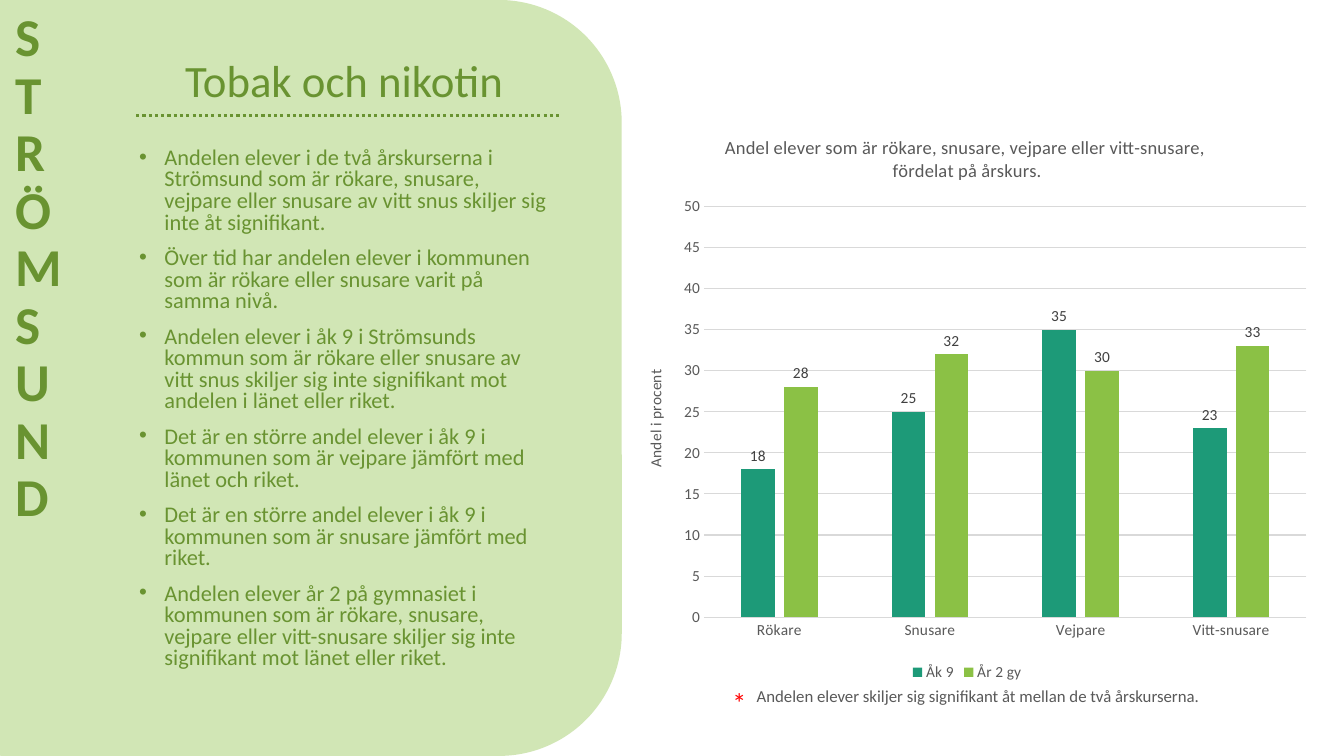
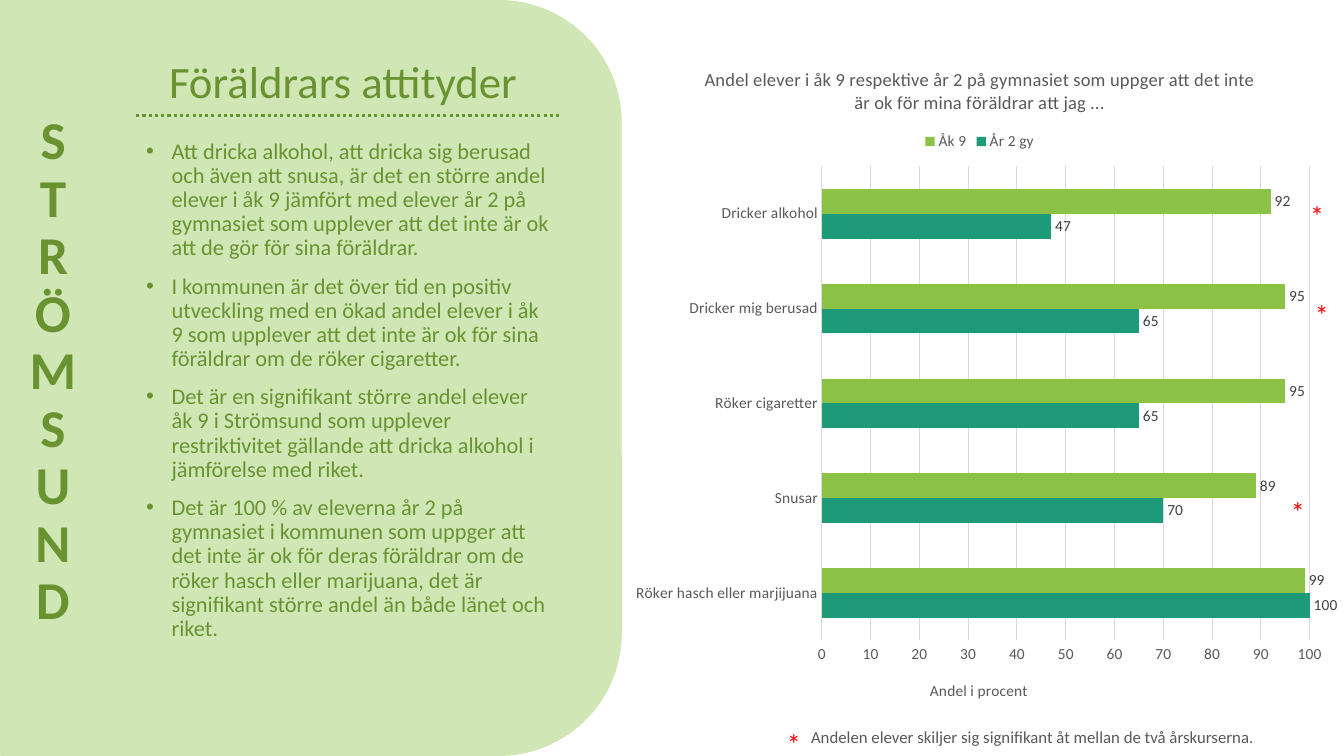
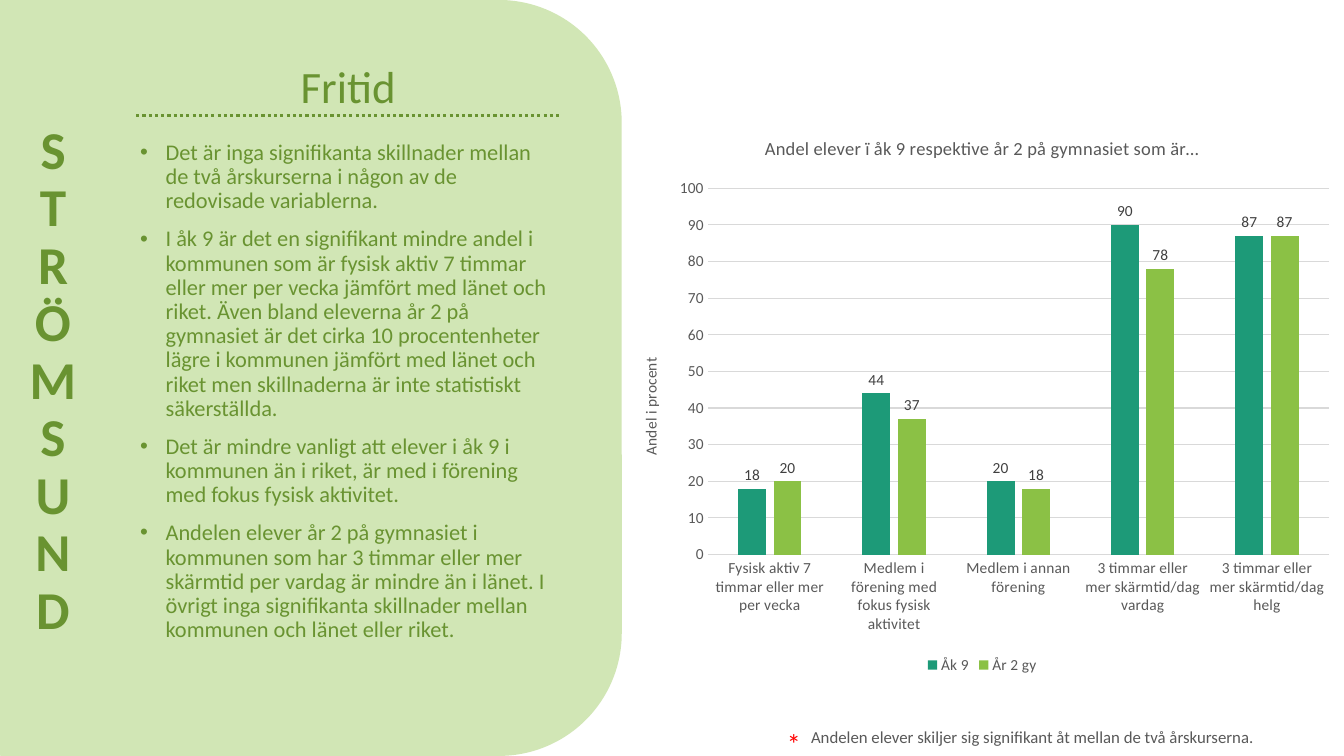
from lxml import etree
from pptx import Presentation
from pptx import util as u
from pptx.chart import data as cd
from pptx.dml import color as col
from pptx.enum import chart as ch, dml, shapes, text
from pptx.oxml import ns

BAND = col.RGBColor(0xD1, 0xE6, 0xB5)
GREEN = col.RGBColor(0x69, 0x93, 0x31)
TEAL = col.RGBColor(0x1D, 0x9A, 0x78)
LIME = col.RGBColor(0x8B, 0xC1, 0x45)
RED = col.RGBColor(0xFF, 0x00, 0x00)
GREY = col.RGBColor(0x59, 0x59, 0x59)
DARK = col.RGBColor(0x40, 0x40, 0x40)
PALE = col.RGBColor(0xD9, 0xD9, 0xD9)
FACE = "Calibri"
PLACE = "STRÖMSUND"
NOTE = "Andelen elever skiljer sig signifikant åt mellan de två årskurserna."
AXIS = "Andel i procent"
NINE = "Åk 9"
TWO = "År 2 gy"


def box(*sides):
    return [u.Cm(side) for side in sides]


def move(shape, sides):
    shape.left, shape.top, shape.width, shape.height = box(*sides)


def style(font, size, color, bold=False):
    font.name = FACE
    font.size = u.Pt(size)
    font.bold = bold
    font.color.rgb = color


def write(para, words, size, color, bold=False):
    run = para.add_run()
    run.text = words
    style(run.font, size, color, bold)


def label(slide, sides, words, size, color, bold=False):
    shape = slide.shapes.add_textbox(*box(*sides))
    frame = shape.text_frame
    frame.word_wrap = True
    write(frame.paragraphs[0], words, size, color, bold)
    return frame


def panel(slide):
    band = slide.shapes.add_shape(
        shapes.MSO_SHAPE.ROUNDED_RECTANGLE, *box(-2.9, 0, 18.57, 19.05))
    band.shadow.inherit = False
    band.fill.solid()
    band.fill.fore_color.rgb = BAND
    band.line.fill.background()
    tree = slide.shapes.element
    tree.remove(band.element)
    tree.insert(2, band.element)
    rule = slide.shapes.add_connector(
        shapes.MSO_CONNECTOR.STRAIGHT, *box(3.43, 2.9, 14.12, 2.9))
    rule.line.color.rgb = GREEN
    rule.line.width = u.Pt(2.25)
    rule.line.dash_style = dml.MSO_LINE.ROUND_DOT
    etree.SubElement(rule.element.spPr, ns.qn("a:effectLst"))


def title(slide, sides, words, anchor):
    head = slide.shapes.title
    move(head, sides)
    frame = head.text_frame
    frame.auto_size = text.MSO_AUTO_SIZE.NONE
    frame.vertical_anchor = anchor
    para = frame.paragraphs[0]
    para.alignment = text.PP_ALIGN.CENTER
    para.line_spacing = 0.9
    write(para, words, 32, GREEN)


def points(slide, sides, items, space):
    body = slide.placeholders[1]
    move(body, sides)
    body.fill.solid()
    body.fill.fore_color.rgb = BAND
    frame = body.text_frame
    frame.auto_size = text.MSO_AUTO_SIZE.NONE
    for num, item in enumerate(items):
        para = frame.add_paragraph() if num else frame.paragraphs[0]
        para.line_spacing = space
        para.space_before = u.Pt(10)
        props = para._p.get_or_add_pPr()
        props.set("marL", str(u.Cm(0.64)))
        props.set("indent", str(-u.Cm(0.64)))
        etree.SubElement(props, ns.qn("a:buFont"), typeface="Arial")
        etree.SubElement(props, ns.qn("a:buChar"), char="•")
        write(para, item, 16, GREEN)


def stack(slide, sides, align):
    frame = label(slide, sides, PLACE, 38, GREEN, True)
    frame.vertical_anchor = text.MSO_ANCHOR.BOTTOM
    para = frame.paragraphs[0]
    para.alignment = align
    para.line_spacing = 0.9
    frame._txBody.bodyPr.set("vert", "wordArtVert")


def star(slide, left, top):
    label(slide, (left, top, 1.22, 1.75), "*", 20, RED)


def note(slide, left, top):
    star(slide, left, top)
    frame = label(slide, (left + 0.61, top, 11.96, 0.76), NOTE, 12, GREY)
    frame.auto_size = text.MSO_AUTO_SIZE.SHAPE_TO_FIT_TEXT


def place(plot, sides):
    area = plot._element.getparent()
    old = area.find(ns.qn("c:layout"))
    if old is not None:
        area.remove(old)
    lay = etree.Element(ns.qn("c:layout"))
    man = etree.SubElement(lay, ns.qn("c:manualLayout"))
    rows = [("layoutTarget", "inner"), ("xMode", "edge"), ("yMode", "edge")]
    for tag, val in rows + list(zip("xywh", sides)):
        etree.SubElement(man, ns.qn("c:" + tag), val=str(val))
    area.insert(0, lay)


def graph(slide, sides, kind, lines, cats, sets, inner, top, step, gap, lap, key):
    data = cd.CategoryChartData(number_format="0")
    data.categories = cats
    for name, vals, _ in sets:
        data.add_series(name, vals)
    chart = slide.shapes.add_chart(kind, *box(*sides), data).chart
    style(chart.font, 11, GREY)
    chart.has_title = True
    frame = chart.chart_title.text_frame
    for num, line in enumerate(lines):
        para = frame.add_paragraph() if num else frame.paragraphs[0]
        write(para, line, 13.2, GREY)
    chart.chart_title.include_in_layout = False
    chart.has_legend = True
    chart.legend.position = key
    chart.legend.include_in_layout = False
    style(chart.legend.font, 11, GREY)

    base, scale = chart.category_axis, chart.value_axis
    for axis in (base, scale):
        axis.major_tick_mark = ch.XL_TICK_MARK.NONE
        style(axis.tick_labels.font, 11, GREY)
    base.format.line.color.rgb = PALE
    base.format.line.width = u.Pt(0.75)
    scale.format.line.fill.background()
    scale.minimum_scale = 0
    scale.maximum_scale = top
    scale.major_unit = step
    scale.tick_labels.number_format = "0"
    scale.tick_labels.number_format_is_linked = False
    scale.major_gridlines.format.line.color.rgb = PALE
    scale.major_gridlines.format.line.width = u.Pt(0.75)
    scale.has_title = True
    write(scale.axis_title.text_frame.paragraphs[0], AXIS, 11, GREY)

    plot = chart.plots[0]
    plot.vary_by_categories = False
    plot.gap_width = gap
    plot.overlap = lap
    for bars, (_, _, color) in zip(plot.series, sets):
        bars.format.fill.solid()
        bars.format.fill.fore_color.rgb = color
        tags = bars.data_labels
        tags.show_value = True
        tags.number_format = "0"
        tags.number_format_is_linked = False
        tags.position = ch.XL_LABEL_POSITION.OUTSIDE_END
        style(tags.font, 11, DARK)
    place(plot, inner)


def columns(slide, sides, lines, cats, nine, two, inner, top, step):
    graph(slide, sides, ch.XL_CHART_TYPE.COLUMN_CLUSTERED, lines, cats,
          [(NINE, nine, TEAL), (TWO, two, LIME)], inner, top, step,
          219, -27, ch.XL_LEGEND_POSITION.BOTTOM)


def smoking(slide):
    panel(slide)
    title(slide, (3.25, 0.66, 10.85, 2.18), "Tobak och nikotin", text.MSO_ANCHOR.BOTTOM)
    points(slide, (3.25, 3.61, 10.85, 13.84), [
        "Andelen elever i de två årskurserna i Strömsund som är rökare, snusare, "
        "vejpare eller snusare av vitt snus skiljer sig inte åt signifikant.",
        "Över tid har andelen elever i kommunen som är rökare eller snusare "
        "varit på samma nivå.",
        "Andelen elever i åk 9 i Strömsunds kommun som är rökare eller snusare av "
        "vitt snus skiljer sig inte signifikant mot andelen i länet eller riket.",
        "Det är en större andel elever i åk 9 i kommunen som är vejpare jämfört "
        "med länet och riket.",
        "Det är en större andel elever i åk 9 i kommunen som är snusare jämfört "
        "med riket.",
        "Andelen elever år 2 på gymnasiet i kommunen som är rökare, snusare, vejpare "
        "eller vitt-snusare skiljer sig inte signifikant mot länet eller riket.",
    ], 0.8)
    stack(slide, (0.13, 0.15, 2.67, 18.75), text.PP_ALIGN.LEFT)
    columns(slide, (15.65, 2.9, 17.45, 14.38),
            ["Andel elever som är rökare, snusare, vejpare eller vitt-snusare, ",
             "fördelat på årskurs."],
            ["Rökare", "Snusare", "Vejpare", "Vitt-snusare"],
            [18, 25, 35, 23], [28, 32, 30, 33], (0.12, 0.16, 0.87, 0.72), 50, 5)
    note(slide, 18.21, 17.15)


def parents(slide):
    panel(slide)
    title(slide, (2.77, 0.79, 12.01, 2.06), "Föräldrars attityder ", text.MSO_ANCHOR.BOTTOM)
    points(slide, (3.43, 3.4, 10.69, 14.22), [
        "Att dricka alkohol, att dricka sig berusad och även att snusa, är det en "
        "större andel elever i åk 9 jämfört med elever år 2 på gymnasiet som upplever "
        "att det inte är ok att de gör för sina föräldrar.",
        "I kommunen är det över tid en positiv utveckling med en ökad andel elever i "
        "åk 9 som upplever att det inte är ok för sina föräldrar om de röker cigaretter.",
        "Det är en signifikant större andel elever åk 9 i Strömsund som upplever "
        "restriktivitet gällande att dricka alkohol i jämförelse med riket.",
        "Det är 100 % av eleverna år 2 på gymnasiet i kommunen som uppger att det inte "
        "är ok för deras föräldrar om de röker hasch eller marijuana, det är signifikant "
        "större andel än både länet och riket.",
    ], 0.9)
    stack(slide, (0, 0, 2.67, 18.77), text.PP_ALIGN.CENTER)
    graph(slide, (15.65, 1.12, 18.08, 17.07), ch.XL_CHART_TYPE.BAR_CLUSTERED,
          ["Andel elever i åk 9 respektive år 2 på gymnasiet som uppger att det inte "
           "är ok för mina föräldrar att jag ..."],
          ["Röker hasch eller marjijuana", "Snusar", "Röker cigaretter",
           "Dricker mig berusad", "Dricker alkohol"],
          [(TWO, [100, 70, 65, 65, 47], TEAL), (NINE, [99, 89, 95, 95, 92], LIME)],
          (0.28, 0.18, 0.68, 0.7), 100, 10, 182, 0, ch.XL_LEGEND_POSITION.TOP)
    for left, top in [(32.77, 4.88), (32.89, 7.37), (32.28, 12.34)]:
        star(slide, left, top)
    note(slide, 19.58, 18.19)


def leisure(slide):
    panel(slide)
    title(slide, (2.77, 1.12, 12.01, 2.26), "Fritid", text.MSO_ANCHOR.MIDDLE)
    points(slide, (3.28, 3.43, 11, 14.2), [
        "Det är inga signifikanta skillnader mellan de två årskurserna i någon av de "
        "redovisade variablerna.",
        "I åk 9 är det en signifikant mindre andel i kommunen som är fysisk aktiv 7 "
        "timmar eller mer per vecka jämfört med länet och riket. Även bland eleverna "
        "år 2 på gymnasiet är det cirka 10 procentenheter lägre i kommunen jämfört med "
        "länet och riket men skillnaderna är inte statistiskt säkerställda.",
        "Det är mindre vanligt att elever i åk 9 i kommunen än i riket, är med i "
        "förening med fokus fysisk aktivitet.",
        "Andelen elever år 2 på gymnasiet i kommunen som har 3 timmar eller mer "
        "skärmtid per vardag är mindre än i länet. I övrigt inga signifikanta "
        "skillnader mellan kommunen och länet eller riket.",
    ], 0.9)
    stack(slide, (0, 0.36, 2.67, 18.54), text.PP_ALIGN.CENTER)
    columns(slide, (15.65, 2.9, 18.21, 14.2),
            ["Andel elever ï åk 9 respektive år 2 på gymnasiet som är…"],
            ["Fysisk aktiv 7 timmar eller mer per vecka",
             "Medlem i förening med fokus fysisk aktivitet",
             "Medlem i annan förening",
             "3 timmar eller mer skärmtid/dag vardag",
             "3 timmar eller mer skärmtid/dag helg"],
            [18, 44, 20, 90, 87], [20, 37, 18, 78, 87], (0.12, 0.13, 0.86, 0.65), 100, 10)
    note(slide, 19.58, 18.19)


def main():
    deck = Presentation()
    deck.slide_width, deck.slide_height = box(33.87, 19.05)
    for build in (smoking, parents, leisure):
        build(deck.slides.add_slide(deck.slide_layouts[1]))
    deck.save("out.pptx")


if __name__ == "__main__":
    main()
